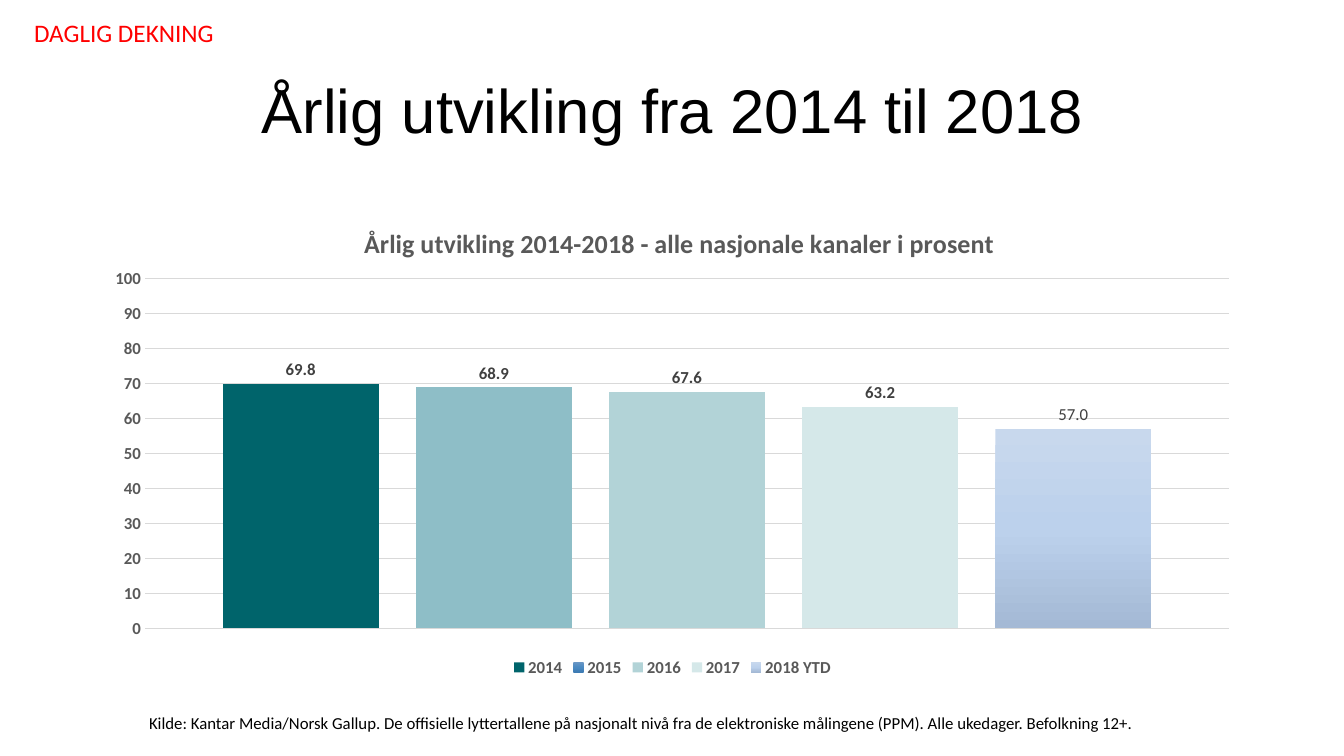
"""Build a slide with a column chart of yearly radio reach, 2014 to 2018."""
from copy import deepcopy

from lxml import etree
from pptx import Presentation
from pptx.chart.data import CategoryChartData
from pptx.dml.color import RGBColor
from pptx.enum.chart import XL_CHART_TYPE, XL_LABEL_POSITION, XL_LEGEND_POSITION, XL_TICK_MARK
from pptx.enum.text import MSO_ANCHOR, PP_ALIGN
from pptx.oxml.ns import qn
from pptx.util import Inches, Pt

COLUMNS = XL_CHART_TYPE.COLUMN_CLUSTERED
OUTSIDE_END = XL_LABEL_POSITION.OUTSIDE_END
BOTTOM = XL_LEGEND_POSITION.BOTTOM
NO_TICK = XL_TICK_MARK.NONE
TOP, MIDDLE = MSO_ANCHOR.TOP, MSO_ANCHOR.MIDDLE
LEFT, CENTER = PP_ALIGN.LEFT, PP_ALIGN.CENTER

THEME = {
    "heading": "Arial", "body": "Calibri",
    "black": "000000", "red": "FF0000", "axis": "595959", "label": "404040", "grid": "D9D9D9",
    "title": 44, "tag": 18, "chart_title": 18.6, "small": 12,
}

TEXTS = [
    ("Årlig utvikling fra 2014 til 2018", (0.24, 0.4, 12.87, 1.45),
     "heading", "title", "black", CENTER, MIDDLE),
    ("Kilde: Kantar Media/Norsk Gallup. De offisielle lyttertallene på nasjonalt nivå fra de "
     "elektroniske målingene (PPM). Alle ukedager. Befolkning 12+.", (1.38, 7.02, 11.23, 0.3),
     "body", "small", "black", LEFT, TOP),
    ("DAGLIG DEKNING", (0.24, 0.12, 5.84, 0.4), "body", "tag", "red", LEFT, TOP),
]

CHART_TITLE = "Årlig utvikling 2014-2018 - alle nasjonale kanaler i prosent"
CHART_BOX = (0.92, 2, 11.5, 4.76)
TITLE_LAYOUT = {"xMode": "edge", "yMode": "edge", "x": 0.23, "y": 0.04}
PLOT_LAYOUT = {"layoutTarget": "inner", "xMode": "edge", "yMode": "edge",
               "x": 0.045, "y": 0.16, "w": 0.935, "h": 0.73}
SERIES = [
    ("2014", 69.8, ["00646B"], True),
    ("2015", 68.9, ["6997C5", "4B8AC2", "3D7BB3"], True),
    ("2016", 67.6, ["B2D3D7"], True),
    ("2017", 63.2, ["D5E8E9"], True),
    ("2018 YTD", 57.0, ["C8D8ED", "BCD1EC", "A4B9D5"], False),
]
POINT_COLORS = {"2015": "8EBEC7"}


def rgb(value):
    return RGBColor.from_string(value)


def set_font(font, face, size, color, bold=False):
    font.name, font.size, font.bold = THEME[face], Pt(THEME[size]), bold
    font.color.rgb = rgb(THEME[color])


def add_text(slide, text, box, face, size, color, align, anchor):
    tf = slide.shapes.add_textbox(*map(Inches, box)).text_frame
    tf.word_wrap, tf.vertical_anchor = True, anchor
    p = tf.paragraphs[0]
    p.text, p.alignment = text, align
    if size == "title":
        p.line_spacing = 0.9
    set_font(p.font, face, size, color)


def set_layout(parent, index, values):
    for old in parent.findall(qn("c:layout")):
        parent.remove(old)
    layout = etree.Element(qn("c:layout"))
    manual = etree.SubElement(layout, qn("c:manualLayout"))
    for tag, value in values.items():
        etree.SubElement(manual, qn(f"c:{tag}")).set("val", str(value))
    parent.insert(index, layout)


def paint(series, colors):
    fill = series.format.fill
    if len(colors) == 1:
        fill.solid()
        fill.fore_color.rgb = rgb(colors[0])
        return
    fill.gradient()
    fill.gradient_angle = 270
    stops = next(series._element.iter(qn("a:gsLst")))
    stops.append(deepcopy(stops[0]))
    for i, (stop, color) in enumerate(zip(fill.gradient_stops, colors)):
        stop.position = i / (len(colors) - 1)
        stop.color.rgb = rgb(color)


def style_series(series, colors, bold):
    paint(series, colors)
    series.invert_if_negative = False
    if series.name in POINT_COLORS:
        fill = series.points[0].format.fill
        fill.solid()
        fill.fore_color.rgb = rgb(POINT_COLORS[series.name])
    labels = series.data_labels
    labels.show_value, labels.position = True, OUTSIDE_END
    labels.number_format, labels.number_format_is_linked = "0.0", False
    set_font(labels.font, "body", "small", "label", bold)


def add_reach_chart(slide):
    data = CategoryChartData()
    data.categories = ["1"]
    for name, value, _, _ in SERIES:
        data.add_series(name, [value])
    chart = slide.shapes.add_chart(COLUMNS, *map(Inches, CHART_BOX), data).chart
    set_font(chart.font, "body", "small", "axis")

    chart.has_title = True
    p = chart.chart_title.text_frame.paragraphs[0]
    p.text = CHART_TITLE
    set_font(p.font, "body", "chart_title", "axis", True)
    set_layout(chart.chart_title._element, 1, TITLE_LAYOUT)
    set_layout(chart._chartSpace.chart.plotArea, 0, PLOT_LAYOUT)

    chart.has_legend = True
    chart.legend.position, chart.legend.include_in_layout = BOTTOM, False
    set_font(chart.legend.font, "body", "small", "axis", True)

    chart.category_axis.visible = False
    axis = chart.value_axis
    axis.minimum_scale, axis.maximum_scale, axis.major_unit = 0, 100, 10
    axis.major_tick_mark = axis.minor_tick_mark = NO_TICK
    axis.format.line.fill.background()
    grid = axis.major_gridlines.format.line
    grid.color.rgb, grid.width = rgb(THEME["grid"]), Pt(0.75)
    set_font(axis.tick_labels.font, "body", "small", "axis", True)

    plot = chart.plots[0]
    plot.gap_width, plot.overlap, plot.vary_by_categories = 100, -24, False
    for series, (_, _, colors, bold) in zip(plot.series, SERIES):
        style_series(series, colors, bold)


def main():
    prs = Presentation()
    prs.slide_width, prs.slide_height = Inches(13.33), Inches(7.5)
    slide = prs.slides.add_slide(prs.slide_layouts[6])
    add_reach_chart(slide)
    for text in TEXTS:
        add_text(slide, *text)
    prs.save("out.pptx")


if __name__ == "__main__":
    main()
